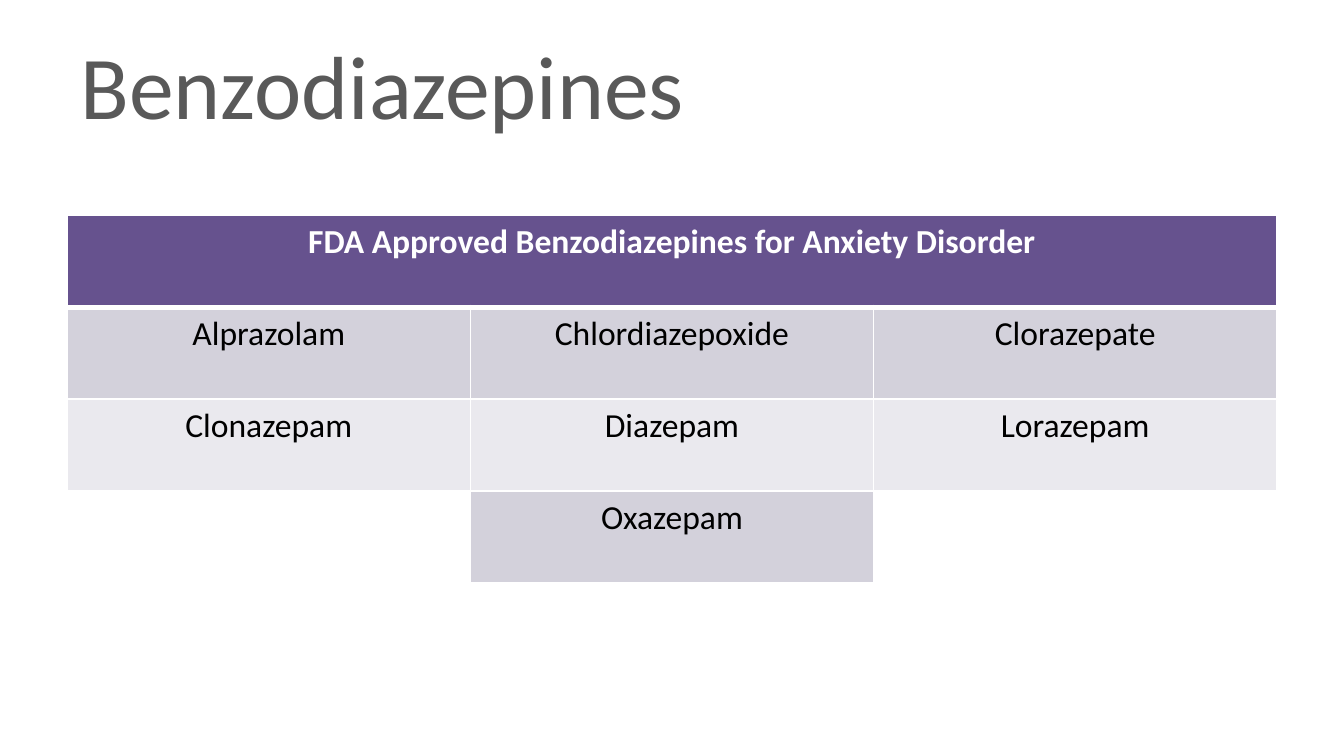
from lxml.etree import SubElement
from pptx import Presentation
from pptx.dml.color import RGBColor
from pptx.enum.text import MSO_ANCHOR, MSO_AUTO_SIZE, PP_ALIGN
from pptx.oxml.ns import qn
from pptx.util import Pt

PX = 4572
FONT = "Calibri"
WHITE = "FFFFFF"
HEADER_FILL = "66528E"
BAND_FILLS = ("D3D1DB", "EAE9EE")
HEADER = "FDA Approved Benzodiazepines for Anxiety Disorder"
DRUGS = [
    ["Alprazolam", "Chlordiazepoxide", "Clorazepate"],
    ["Clonazepam", "Diazepam", "Lorazepam"],
    ["", "Oxazepam", ""],
]


def color(hex_text):
    """Return the colour for a hex string."""
    return RGBColor.from_string(hex_text)


def place(shape, box):
    """Move and size a shape to a box in px."""
    shape.left, shape.top, shape.width, shape.height = (side * PX for side in box)


def add_span(para, text, size, ink, bold=False):
    """Add one formatted run to a paragraph."""
    span = para.add_run()
    span.text = text
    span.font.name = FONT
    span.font.size = Pt(size)
    span.font.bold = bold
    span.font.color.rgb = color(ink)


def add_borders(cell, widths):
    """Draw white borders of the given point widths around a cell."""
    properties = cell._tc.get_or_add_tcPr()
    for index, (side, width) in enumerate(widths.items()):
        line = properties.makeelement(qn(f"a:ln{side}"), {"w": str(Pt(width))})
        fill = SubElement(line, qn("a:solidFill"))
        SubElement(fill, qn("a:srgbClr"), val=WHITE)
        properties.insert(index, line)


def fill_cell(cell, text, fill, ink, bold=False):
    """Give a cell its fill and centred text."""
    cell.fill.solid()
    cell.fill.fore_color.rgb = color(fill)
    if text:
        para = cell.text_frame.paragraphs[0]
        para.alignment = PP_ALIGN.CENTER
        add_span(para, text, 18, ink, bold)


def add_title(page, box, text):
    """Fill the title placeholder."""
    title = page.shapes.title
    place(title, box)
    frame = title.text_frame
    frame.word_wrap = True
    frame.auto_size = MSO_AUTO_SIZE.NONE
    frame.vertical_anchor = MSO_ANCHOR.BOTTOM
    para = frame.paragraphs[0]
    para.alignment = PP_ALIGN.LEFT
    para.line_spacing = 0.7
    add_span(para, text, 48, "595959")


def add_drug_table(page, box):
    """Add the drug table with a merged header and banded rows."""
    rows = [[HEADER, "", ""], *DRUGS]
    sides = [side * PX for side in box]
    table = page.shapes.add_table(len(rows), len(rows[0]), *sides).table
    for row, texts in enumerate(rows):
        for column, text in enumerate(texts):
            cell = table.cell(row, column)
            if row == 0:
                fill_cell(cell, text, HEADER_FILL, WHITE, bold=True)
            else:
                band = BAND_FILLS[(row - 1) % 2] if text else WHITE
                fill_cell(cell, text, band, "000000")
            top = 3 if row == 1 else 1
            bottom = 3 if row == 0 else 1
            add_borders(cell, {"L": 1, "R": 1, "T": top, "B": bottom})
    table.cell(0, 0).merge(table.cell(0, len(rows[0]) - 1))


def main():
    """Build and save the deck."""
    deck = Presentation()
    deck.slide_width, deck.slide_height = 2000 * PX, 1125 * PX
    page = deck.slides.add_slide(deck.slide_layouts[5])
    add_title(page, (100, 68, 1800, 142), "Benzodiazepines")
    add_drug_table(page, (100, 320, 1800, 548))
    deck.save("out.pptx")


if __name__ == "__main__":
    main()
